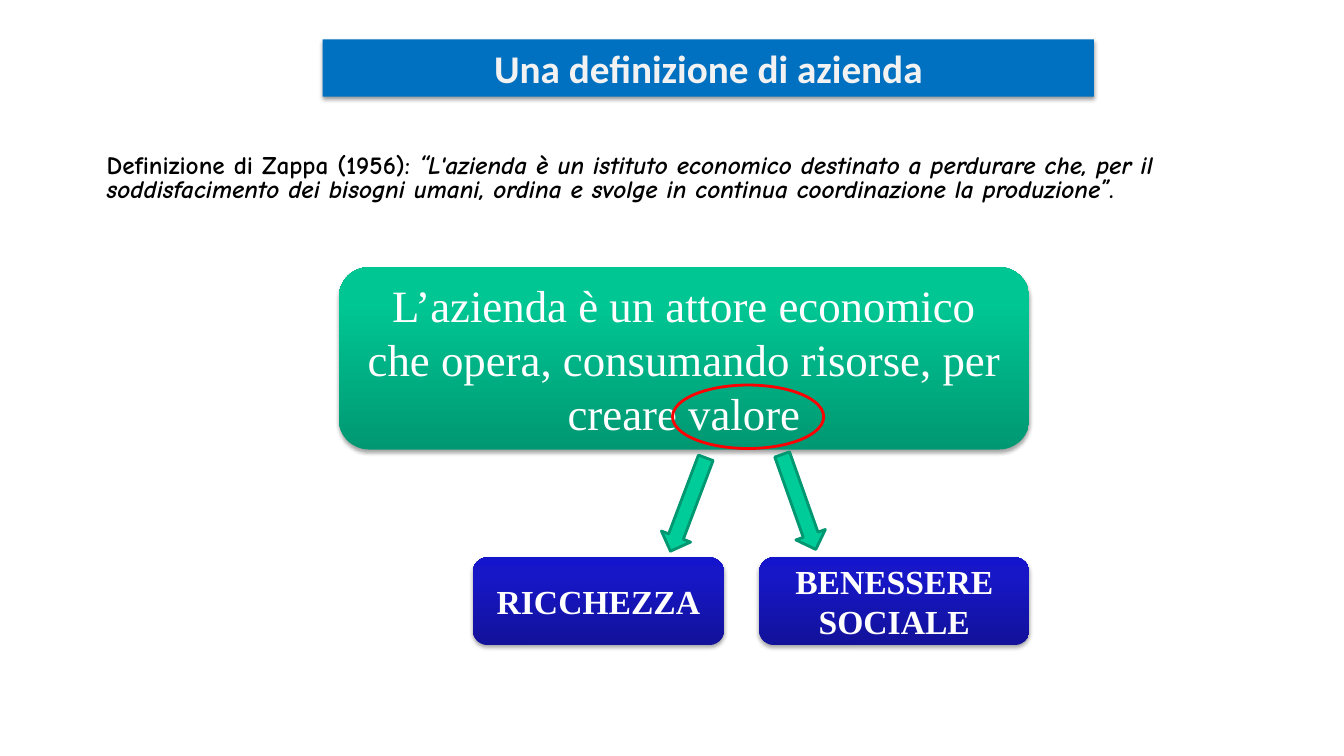
from dataclasses import dataclass

import copy
import lxml.etree
import pptx
import pptx.dml.color
import pptx.enum.shapes
import pptx.enum.text
import pptx.oxml.ns
import pptx.shapes.autoshape
import pptx.slide
import pptx.util

Inches = pptx.util.Inches
Pt = pptx.util.Pt
RGB = pptx.dml.color.RGBColor.from_string
qn = pptx.oxml.ns.qn
MSO_SHAPE = pptx.enum.shapes.MSO_SHAPE
PP_ALIGN = pptx.enum.text.PP_ALIGN
MSO_ANCHOR = pptx.enum.text.MSO_ANCHOR


@dataclass(frozen=True)
class Theme:
    title_fill: str = "0070C0"
    title_text: str = "F2F2F2"
    white: str = "FFFFFF"
    black: str = "000000"
    ring: str = "FF0000"
    arrow_fill: str = "00CC99"
    arrow_line: str = "009771"
    green: tuple[str, ...] = ("009872", "00C694", "00C795")
    blue: tuple[str, ...] = ("12129A", "1717C8", "1414CC")
    gradient_positions: tuple[float, ...] = (0, 0.8, 1)
    outline: float = 2
    title_size: int = 28
    statement_size: int = 32
    outcome_size: int = 24
    quote_size: int = 18
    title_font: str = "Calibri"
    body_font: str = "Times New Roman"
    quote_font: str = "Comic Neue"


THEME = Theme()


@dataclass(frozen=True)
class Box:
    left: float
    top: float
    width: float
    height: float


@dataclass(frozen=True)
class Panel:
    box: Box
    preset: MSO_SHAPE
    text: str
    fills: tuple[str, ...]
    size: int
    font: str = THEME.body_font
    color: str = THEME.white
    bold: bool = True
    shadow_opacity: int = 35
    shadow_distance: float = 1.8


@dataclass(frozen=True)
class Outline:
    box: Box
    preset: MSO_SHAPE
    line: str
    fill: str | None = None
    rotation: float = 0


TITLE = Panel(Box(3.2, 0.39, 7.65, 0.57), MSO_SHAPE.RECTANGLE, "Una definizione di azienda",
              (THEME.title_fill,), THEME.title_size, THEME.title_font, THEME.title_text,
              shadow_opacity=38, shadow_distance=1.6)
STATEMENT = Panel(Box(3.36, 2.65, 6.85, 1.81), MSO_SHAPE.ROUNDED_RECTANGLE,
                  "L’azienda è un attore economico che opera, consumando risorse, per creare valore",
                  THEME.green, THEME.statement_size, bold=False)
OUTCOMES = [
    Panel(Box(left, 5.53, width, 0.87), MSO_SHAPE.ROUNDED_RECTANGLE, text,
          THEME.blue, THEME.outcome_size)
    for left, width, text in ((4.69, 2.49, "RICCHEZZA"), (7.53, 2.68, "BENESSERE SOCIALE"))
]
VALUE_RING = Outline(Box(6.67, 3.82, 1.5, 0.63), MSO_SHAPE.OVAL, THEME.ring)
ARROWS = [
    Outline(box, MSO_SHAPE.DOWN_ARROW, THEME.arrow_line, THEME.arrow_fill, rotation)
    for box, rotation in ((Box(6.67, 4.51, 0.31, 0.99), 20.7), (Box(7.77, 4.48, 0.31, 1), 340.5))
]
QUOTE_BOX = Box(0.96, 1.49, 11.42, 0.59)
QUOTE = [
    ("Definizione di Zappa (1956): ", False),
    ("“L'azienda è un istituto economico destinato a perdurare che, per il soddisfacimento "
     "dei bisogni umani, ordina e svolge in continua coordinazione la produzione”", True),
    (".", False),
]


def place(box: Box) -> tuple[int, ...]:
    return tuple(Inches(length) for length in (box.left, box.top, box.width, box.height))


def paint(shape: pptx.shapes.autoshape.Shape, colors: tuple[str, ...]) -> None:
    """Fill with one colour, or with a gradient rising from the bottom edge."""
    if len(colors) == 1:
        shape.fill.solid()
        shape.fill.fore_color.rgb = RGB(colors[0])
        return
    shape.fill.gradient()
    shape.fill.gradient_angle = 90
    stop_list = shape._element.spPr.find(".//" + qn("a:gsLst"))
    stop_list.append(copy.deepcopy(stop_list[0]))
    for stop, color, position in zip(shape.fill.gradient_stops, colors, THEME.gradient_positions):
        stop.color.rgb = RGB(color)
        stop.position = position


def cast_shadow(shape: pptx.shapes.autoshape.Shape, opacity: int, distance: float) -> None:
    effects = shape._element.spPr.find(qn("a:effectLst"))
    shadow = lxml.etree.SubElement(effects, qn("a:outerShdw"), blurRad=str(Pt(3.1)),
                                   dist=str(Pt(distance)), dir="5400000", rotWithShape="0")
    color = lxml.etree.SubElement(shadow, qn("a:srgbClr"), val=THEME.black)
    lxml.etree.SubElement(color, qn("a:alpha"), val=str(opacity * 1000))


def draw_panel(slide: pptx.slide.Slide, panel: Panel) -> None:
    shape = slide.shapes.add_shape(panel.preset, *place(panel.box))
    shape.shadow.inherit = False
    paint(shape, panel.fills)
    shape.line.fill.background()
    cast_shadow(shape, panel.shadow_opacity, panel.shadow_distance)
    frame = shape.text_frame
    frame.word_wrap = True
    frame.vertical_anchor = MSO_ANCHOR.MIDDLE
    paragraph = frame.paragraphs[0]
    paragraph.text = panel.text
    paragraph.alignment = PP_ALIGN.CENTER
    font = paragraph.font
    font.name, font.size, font.bold = panel.font, Pt(panel.size), panel.bold
    font.color.rgb = RGB(panel.color)


def draw_outline(slide: pptx.slide.Slide, outline: Outline) -> None:
    shape = slide.shapes.add_shape(outline.preset, *place(outline.box))
    shape.shadow.inherit = False
    shape.rotation = outline.rotation
    if outline.fill:
        paint(shape, (outline.fill,))
    else:
        shape.fill.background()
    shape.line.color.rgb = RGB(outline.line)
    shape.line.width = Pt(THEME.outline)


def draw_quote(slide: pptx.slide.Slide) -> None:
    frame = slide.shapes.add_textbox(*place(QUOTE_BOX)).text_frame
    frame.word_wrap = True
    paragraph = frame.paragraphs[0]
    paragraph.line_spacing = 0.8
    font = paragraph.font
    font.name, font.size, font.bold = THEME.quote_font, Pt(THEME.quote_size), True
    font.color.rgb = RGB(THEME.black)
    for text, italic in QUOTE:
        run = paragraph.add_run()
        run.text = text
        run.font.italic = italic


def main() -> None:
    deck = pptx.Presentation()
    deck.slide_width, deck.slide_height = Inches(13.33), Inches(7.5)
    slide = deck.slides.add_slide(deck.slide_layouts[6])

    # Title and central statement
    for panel in (TITLE, STATEMENT):
        draw_panel(slide, panel)

    # Ring around the key word, and arrows to its two outcomes
    for outline in (VALUE_RING, *ARROWS):
        draw_outline(slide, outline)
    for panel in OUTCOMES:
        draw_panel(slide, panel)

    # Quoted definition
    draw_quote(slide)
    deck.save("out.pptx")


if __name__ == "__main__":
    main()
